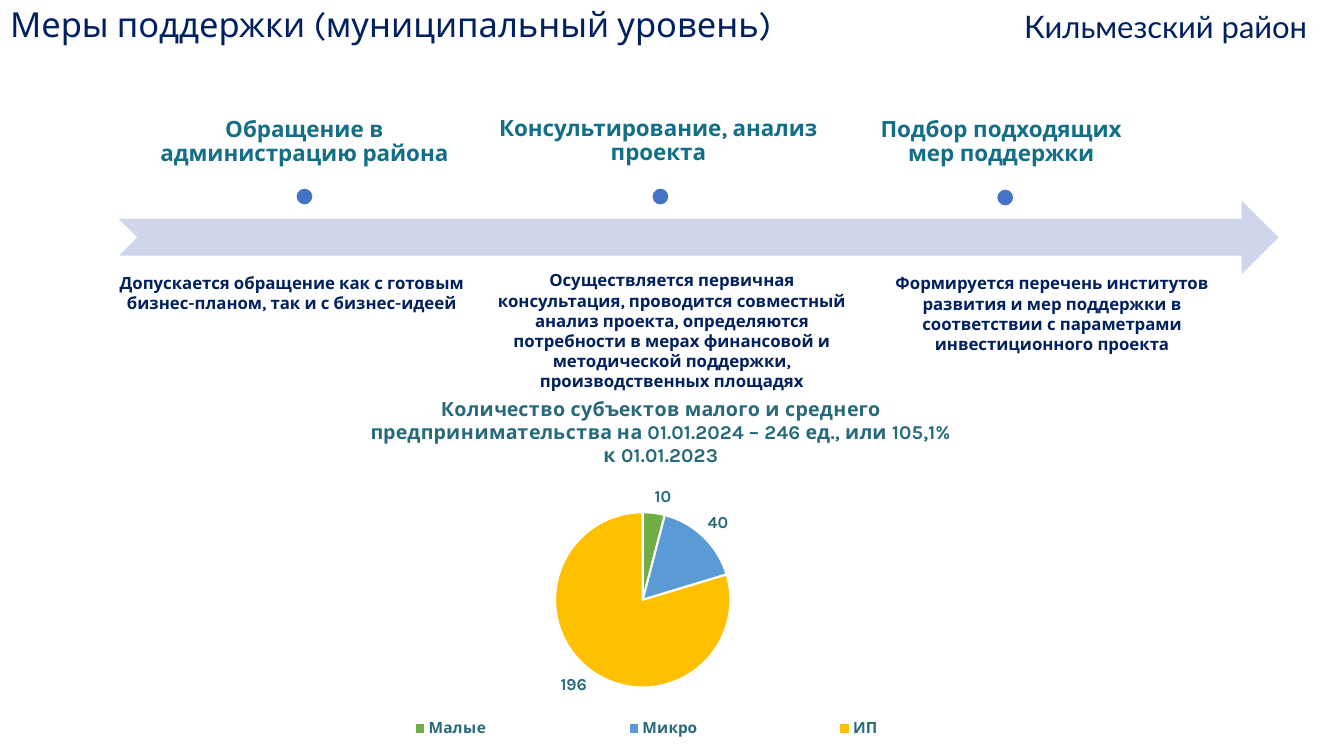
from lxml import etree
from pptx import Presentation
from pptx.chart.data import CategoryChartData
from pptx.dml.color import RGBColor
from pptx.enum.chart import XL_CHART_TYPE as ChartType
from pptx.enum.chart import XL_LABEL_POSITION as LabelPosition
from pptx.enum.chart import XL_LEGEND_POSITION as LegendPosition
from pptx.enum.shapes import MSO_SHAPE as Shape
from pptx.enum.text import MSO_ANCHOR as Anchor
from pptx.enum.text import PP_ALIGN as Align
from pptx.oxml import parse_xml
from pptx.util import Pt

PX = 9144  # one hundredth of an inch
NAVY = RGBColor(0x00, 0x20, 0x60)
TEAL = RGBColor(0x12, 0x6F, 0x87)
CHART_TEAL = RGBColor(0x27, 0x6A, 0x7C)
LAVENDER = RGBColor(0xCF, 0xD5, 0xEA)
DOT_BLUE = RGBColor(0x44, 0x72, 0xC4)
WHITE = RGBColor(0xFF, 0xFF, 0xFF)
SLICE_COLORS = [RGBColor(0x70, 0xAD, 0x47), RGBColor(0x5B, 0x9B, 0xD5),
                RGBColor(0xFF, 0xC0, 0x00)]
CHART_NS = "http://schemas.openxmlformats.org/drawingml/2006/chart"


def write(box, text, size, color, font="Karla", bold=False, align=Align.CENTER,
          anchor=Anchor.TOP, spacing=1.0, inset=None):
    frame = box.text_frame
    frame.word_wrap = True
    frame.vertical_anchor = anchor
    if inset is not None:
        for side in ("left", "top", "right", "bottom"):
            setattr(frame, f"margin_{side}", inset * PX)
    para = frame.paragraphs[0]
    para.alignment = align
    para.line_spacing = spacing
    span = para.add_run()
    span.text = text
    style(span.font, dict(size=Pt(size), name=font, bold=bold), color)


def style(font, values, color):
    for key, value in values.items():
        setattr(font, key, value)
    font.color.rgb = color


deck = Presentation()
deck.slide_width, deck.slide_height = 1333 * PX, 750 * PX
page = deck.slides.add_slide(deck.slide_layouts[5])

# Title and district name
title = page.shapes.title
for key, value in dict(left=0, top=9, width=788, height=35).items():
    setattr(title, key, value * PX)
write(title, "Меры поддержки (муниципальный уровень)", 24.6, NAVY,
      align=Align.LEFT, anchor=Anchor.MIDDLE, spacing=0.9)
district = page.shapes.add_textbox(1006 * PX, 3 * PX, 323 * PX, 47 * PX)
write(district, "Кильмезский район", 22.1, NAVY, font="Lato", align=Align.LEFT)

# Timeline arrow
arrow = page.shapes.add_shape(Shape.NOTCHED_RIGHT_ARROW,
                              118 * PX, 199 * PX, 1150 * PX, 73 * PX)
arrow.shadow.inherit = False
arrow.fill.solid()
arrow.fill.fore_color.rgb = LAVENDER
arrow.line.fill.background()

# Steps: heading, heading left, width and anchor, dot left and top,
# note, note left, top, width and height
steps = [
    ("Обращение в администрацию района", 126, 352, Anchor.BOTTOM, 293, 186,
     "Допускается обращение как с готовым бизнес-планом, так и с бизнес-идеей",
     107, 266, 365, 50),
    ("Консультирование, анализ проекта", 477, 352, Anchor.TOP, 646, 186,
     "Осуществляется первичная консультация, проводится совместный анализ "
     "проекта, определяются потребности в мерах финансовой и методической "
     "поддержки, производственных площадях",
     478, 263, 377, 111),
    ("Подбор подходящих мер поддержки", 837, 312, Anchor.BOTTOM, 988, 187,
     "Формируется перечень институтов развития и мер поддержки в соответствии "
     "с параметрами инвестиционного проекта",
     861, 266, 365, 91),
]
for (heading, left, width, anchor, dot_left, dot_top,
     note, note_left, note_top, note_width, note_height) in steps:
    heading_box = page.shapes.add_textbox(left * PX, 104 * PX, width * PX, 73 * PX)
    write(heading_box, heading, 16, TEAL, bold=True, anchor=anchor,
          spacing=0.9, inset=12)

    dot = page.shapes.add_shape(Shape.OVAL, dot_left * PX, dot_top * PX,
                                18 * PX, 18 * PX)
    dot.shadow.inherit = False
    dot.fill.solid()
    dot.fill.fore_color.rgb = DOT_BLUE
    dot.line.color.rgb = WHITE
    dot.line.width = Pt(1.5)

    note_box = page.shapes.add_textbox(note_left * PX, note_top * PX,
                                       note_width * PX, note_height * PX)
    write(note_box, note, 12, NAVY, bold=True)

# Pie chart of businesses
data = CategoryChartData()
data.categories = ["Малые", "Микро", "ИП"]
data.add_series("Series 1", [10, 40, 196])
chart = page.shapes.add_chart(ChartType.PIE, 268 * PX, 375 * PX,
                              739 * PX, 370 * PX, data).chart
chart.font.name = "Calibri"
chart.font.size = Pt(10)
chart_font = dict(name="Karla", bold=True)

chart.has_title = True
title_para = chart.chart_title.text_frame.paragraphs[0]
title_span = title_para.add_run()
title_span.text = ("Количество субъектов малого и среднего предпринимательства "
                   "на 01.01.2024 – 246 ед., или 105,1% к 01.01.2023")
style(title_span.font, dict(chart_font, size=Pt(14)), CHART_TEAL)

chart.has_legend = True
chart.legend.position = LegendPosition.BOTTOM
chart.legend.include_in_layout = False
style(chart.legend.font, dict(chart_font, size=Pt(11)), CHART_TEAL)

pie = chart.plots[0]
pie.vary_by_categories = True
for index, color in enumerate(SLICE_COLORS):
    slice_format = pie.series[0].points[index].format
    slice_format.fill.solid()
    slice_format.fill.fore_color.rgb = color
    slice_format.line.color.rgb = WHITE
    slice_format.line.width = Pt(1.5)
pie.has_data_labels = True
labels = pie.data_labels
labels.show_value = True
labels.show_percentage = False
labels.position = LabelPosition.OUTSIDE_END
style(labels.font, dict(chart_font, size=Pt(12)), CHART_TEAL)

# Places of the chart parts, as shares of the chart area
places = {
    "title": dict(x=0.13, y=0.04),
    "plotArea": dict(x=0.38, y=0.36, w=0.24, h=0.47),
    "legend": dict(x=0.01, y=0.9, w=0.99, h=0.08),
}
chart_root = chart.plots[0].chart.element if hasattr(pie, "chart") and \
    hasattr(pie.chart, "element") else chart.element
for part_name, place in places.items():
    part = next(chart_root.iter(f"{{{CHART_NS}}}{part_name}"))
    for old in part.findall(f"{{{CHART_NS}}}layout"):
        part.remove(old)
    layout = parse_xml(f'<c:layout xmlns:c="{CHART_NS}"><c:manualLayout/></c:layout>')
    values = [(f"{key}Mode", "edge") for key in "xy"] + list(place.items())
    if part_name == "plotArea":
        values.insert(0, ("layoutTarget", "inner"))
    for key, value in values:
        etree.SubElement(layout[0], f"{{{CHART_NS}}}{key}").set("val", str(value))
    part.insert(0 if part_name == "plotArea" else 1, layout)

deck.save("out.pptx")
